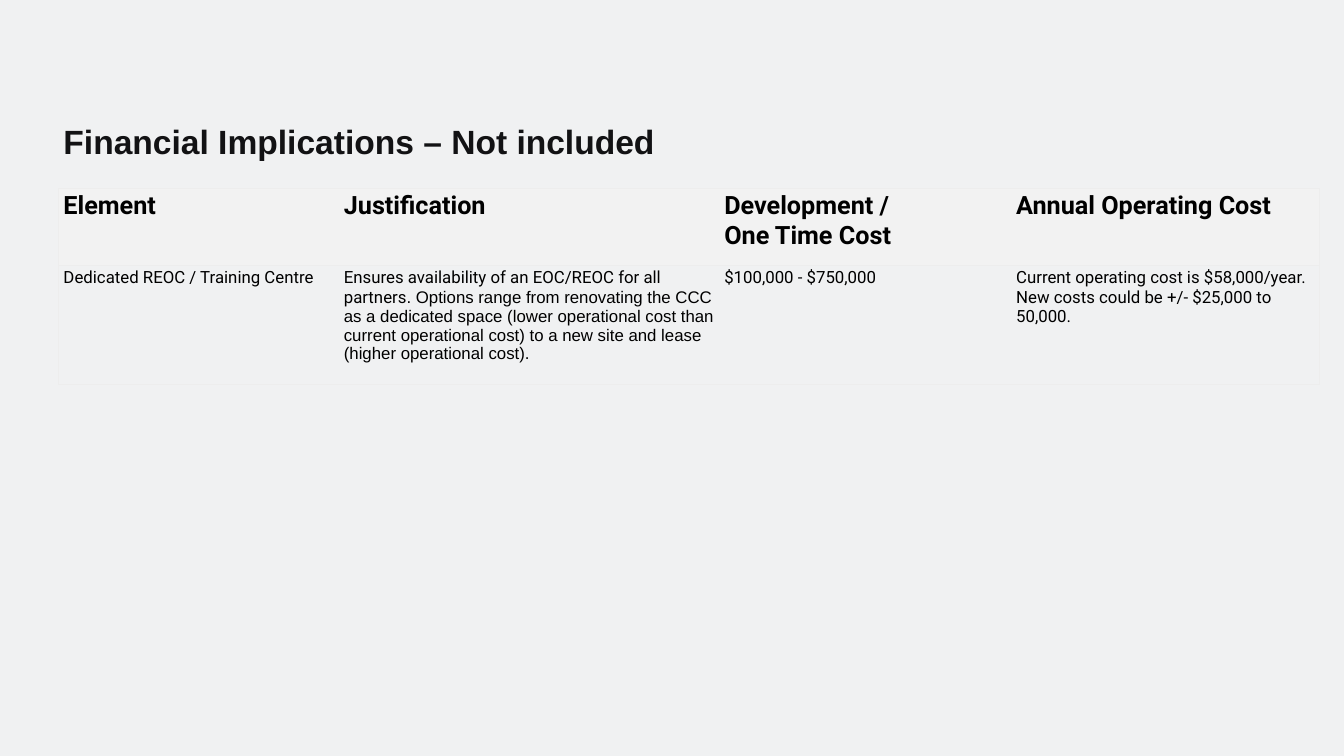
from dataclasses import dataclass

from lxml import etree
from pptx import Presentation
from pptx.dml.color import RGBColor as RGB
from pptx.enum.text import MSO_ANCHOR as ANCHOR, MSO_AUTO_SIZE as AUTO, PP_ALIGN as ALIGN
from pptx.oxml.ns import qn
from pptx.util import Pt


@dataclass(frozen=True)
class Theme:
    background: str = "F0F1F2"
    title: str = "121214"
    text: str = "000000"
    header_fill: str = "F2F2F2"
    border: str = "EDEDED"
    title_font: str = "Arial"
    table_font: str = "Roboto"
    title_size: int = 48
    header_size: int = 36
    body_size: int = 24


theme = Theme()


def style(font, name, size, color, bold):
    font.name, font.size, font.bold = name, Pt(size), bold
    font.color.rgb = RGB.from_string(color)


def add_border(cell, side, color):
    """Draw one cell edge, or hide it when color is None."""
    ln = etree.SubElement(cell._tc.get_or_add_tcPr(), qn(f"a:ln{side}"), w=str(Pt(0.75)))
    if color:
        fill = etree.SubElement(ln, qn("a:solidFill"))
        etree.SubElement(fill, qn("a:srgbClr"), val=color)
    else:
        etree.SubElement(ln, qn("a:noFill"))


# Slide
prs = Presentation()
prs.slide_width, prs.slide_height = Pt(1920), Pt(1080)
s = prs.slides.add_slide(prs.slide_layouts[5])
s.background.fill.solid()
s.background.fill.fore_color.rgb = RGB.from_string(theme.background)

# Title
title = s.shapes.title
title.left, title.top, title.width, title.height = Pt(83.5), Pt(165), Pt(1222.5), Pt(92)
tf = title.text_frame
tf.text = "Financial Implications – Not included"
tf.auto_size, tf.word_wrap, tf.vertical_anchor = AUTO.NONE, True, ANCHOR.TOP
tf.margin_top = Pt(8)
p = tf.paragraphs[0]
p.alignment = ALIGN.LEFT
style(p.font, theme.title_font, theme.title_size, theme.title, True)

# Cost table: each cell is a list of paragraphs, each paragraph a list of (text, font) runs
roboto, arial = theme.table_font, theme.title_font
rows = [
    [
        [[("Element", roboto)]],
        [[("Justification", roboto)]],
        [[("Development /", roboto)], [("One Time Cost", roboto)]],
        [[("Annual Operating Cost", roboto)]],
    ],
    [
        [[("Dedicated REOC / Training Centre", roboto)]],
        [[("Ensures availability of an EOC/REOC for all partners", roboto),
          (". Options range from renovating the CCC as a dedicated space (lower operational "
           "cost than current operational cost) to a new site and lease (higher operational "
           "cost).", arial)]],
        [[("$100,000 - $750,000", roboto)]],
        [[("Current operating cost is $58,000/year. New costs could be +/- $25,000 to 50,000.",
           roboto)]],
    ],
]
col_widths = [400.5, 543.5, 417, 440]
row_heights = [109.5, 170.5]

table = s.shapes.add_table(len(rows), len(col_widths), Pt(83.5), Pt(269.5),
                           Pt(sum(col_widths)), Pt(sum(row_heights))).table
table.horz_banding = False
for column, width in zip(table.columns, col_widths):
    column.width = Pt(width)
for row, height in zip(table.rows, row_heights):
    row.height = Pt(height)

for i, row in enumerate(rows):
    header = i == 0
    size = theme.header_size if header else theme.body_size
    for j, paragraphs in enumerate(row):
        cell = table.cell(i, j)
        # Outer frame and row rule only, no lines between columns
        add_border(cell, "L", theme.border if j == 0 else None)
        add_border(cell, "R", theme.border if j == len(row) - 1 else None)
        add_border(cell, "T", theme.border)
        add_border(cell, "B", theme.border)
        if header:
            cell.fill.solid()
            cell.fill.fore_color.rgb = RGB.from_string(theme.header_fill)
        else:
            cell.fill.background()

        tf = cell.text_frame
        for k, runs in enumerate(paragraphs):
            p = tf.paragraphs[0] if k == 0 else tf.add_paragraph()
            p.alignment = ALIGN.LEFT
            style(p.font, theme.table_font, size, theme.text, header)
            for text, font in runs:
                r = p.add_run()
                r.text = text
                style(r.font, font, size, theme.text, header)

prs.save("out.pptx")
